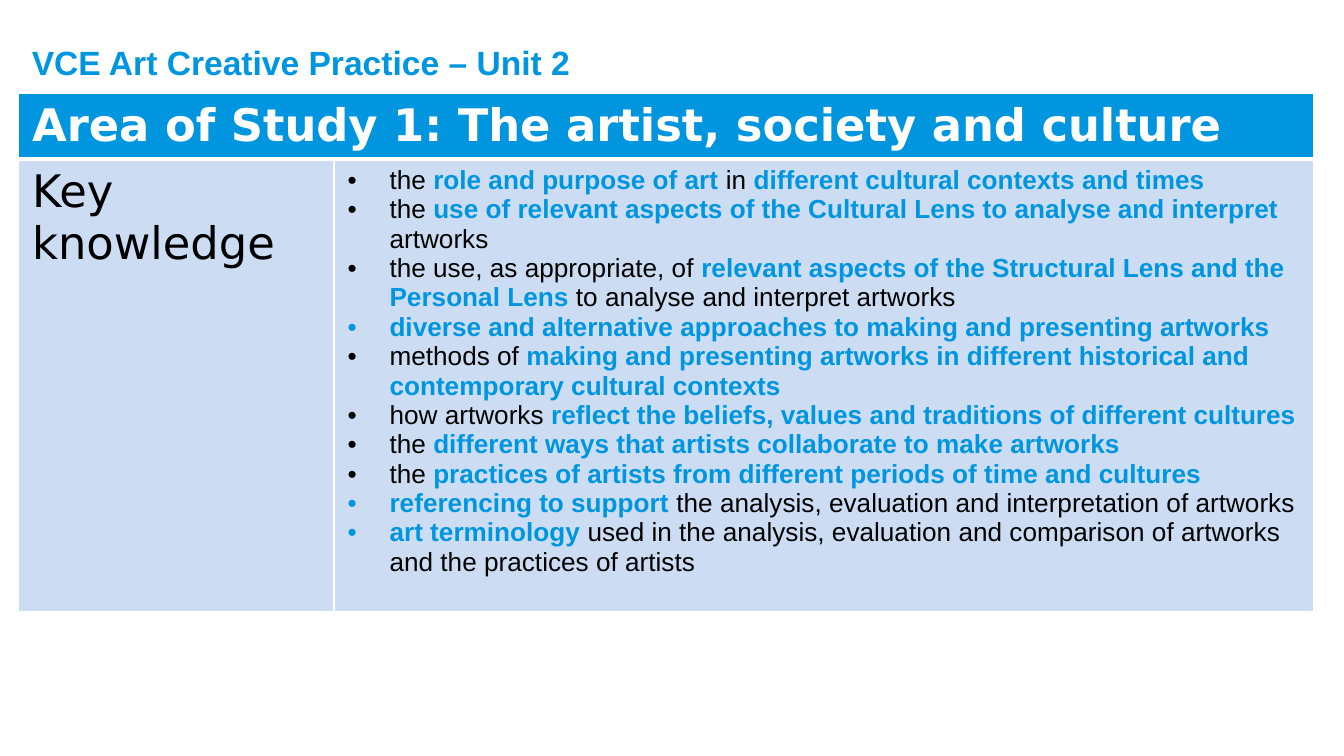
import pptx
import pptx.dml.color
import pptx.oxml
import pptx.oxml.ns
import pptx.util

Pt = pptx.util.Pt

BLUE, PALE, WHITE, BLACK = "0096DF", "CCDDF3", "FFFFFF", "000000"
HEADING = "VCE Art Creative Practice – Unit 2"
AREA = "Area of Study 1: The artist, society and culture"
# Asterisks enclose the highlighted phrases
KEY_KNOWLEDGE = [
    "the *role and purpose of art* in *different cultural contexts and times*",
    "the *use of relevant aspects of the Cultural Lens to analyse and interpret *artworks",
    "the use, as appropriate, of *relevant aspects of the Structural Lens and the "
    "Personal Lens *to analyse and interpret artworks",
    "*diverse and alternative approaches to making and presenting artworks*",
    "methods of *making and presenting artworks in different historical and "
    "contemporary cultural contexts*",
    "how artworks *reflect the beliefs, values and traditions of different cultures*",
    "the *different ways that artists collaborate to make artworks*",
    "the *practices of artists from different periods of time and cultures*",
    "*referencing to support *the analysis, evaluation and interpretation of artworks",
    "*art terminology *used in the analysis, evaluation and comparison of artworks "
    "and the practices of artists",
]


def color(value):
    return pptx.dml.color.RGBColor.from_string(value)


class SlideBuilder:
    body_font = "Arial"
    title_font = "DejaVu Sans"
    indent = 22.5

    def __init__(self, slide):
        self.slide = slide

    def add_run(self, paragraph, text, size, font, ink, bold=False):
        run = paragraph.add_run()
        run.text = text
        run.font.size = Pt(size)
        run.font.name = font
        run.font.bold = bold
        run.font.color.rgb = color(ink)

    def add_text(self, left, top, width, height, text):
        box = self.slide.shapes.add_textbox(Pt(left), Pt(top), Pt(width), Pt(height))
        box.text_frame.word_wrap = True
        self.add_run(box.text_frame.paragraphs[0], text, 18, self.body_font, BLUE, True)

    def add_table(self, left, top, widths, heights):
        frame = self.slide.shapes.add_table(
            len(heights), len(widths), Pt(left), Pt(top), Pt(sum(widths)), Pt(sum(heights)))
        table = frame.table
        for column, width in zip(table.columns, widths):
            column.width = Pt(width)
        for row, height in zip(table.rows, heights):
            row.height = Pt(height)
        return table

    def style_cell(self, cell, fill, top=1, bottom=1):
        properties = cell._tc.get_or_add_tcPr()
        for side, width in (("L", 1), ("R", 1), ("T", top), ("B", bottom)):
            properties.append(pptx.oxml.parse_xml(
                f'<a:ln{side} {pptx.oxml.ns.nsdecls("a")} w="{Pt(width)}"><a:solidFill>'
                f'<a:srgbClr val="{WHITE}"/></a:solidFill></a:ln{side}>'))
        cell.fill.solid()
        cell.fill.fore_color.rgb = color(fill)

    def add_bullets(self, cell, items):
        frame = cell.text_frame
        for index, item in enumerate(items):
            paragraph = frame.add_paragraph() if index else frame.paragraphs[0]
            properties = paragraph._p.get_or_add_pPr()
            properties.set("marL", str(Pt(self.indent)))
            properties.set("indent", str(-Pt(self.indent)))
            properties.append(pptx.oxml.parse_xml(
                f'<a:buFont {pptx.oxml.ns.nsdecls("a")} typeface="Arial"/>'))
            properties.append(pptx.oxml.parse_xml(
                f'<a:buChar {pptx.oxml.ns.nsdecls("a")} char="•"/>'))
            for part, text in enumerate(item.split("*")):
                if text:
                    strong = part % 2 == 1
                    self.add_run(paragraph, text, 14, self.body_font,
                                 BLUE if strong else BLACK, strong)


def main():
    presentation = pptx.Presentation()
    presentation.slide_width, presentation.slide_height = Pt(720), Pt(405)
    builder = SlideBuilder(presentation.slides.add_slide(presentation.slide_layouts[6]))

    # Study table
    table = builder.add_table(10, 50, [169, 525], [35, 242.5])
    for column in range(2):
        builder.style_cell(table.cell(0, column), BLUE, bottom=3)
        builder.style_cell(table.cell(1, column), PALE, top=3)
    table.cell(0, 0).merge(table.cell(0, 1))
    for row, text, ink in ((0, AREA, WHITE), (1, "Key knowledge", BLACK)):
        paragraph = table.cell(row, 0).text_frame.paragraphs[0]
        builder.add_run(paragraph, text, 24, builder.title_font, ink, row == 0)
    builder.add_bullets(table.cell(1, 1), KEY_KNOWLEDGE)

    # Heading
    builder.add_text(10, 19, 360, 29, HEADING)

    presentation.save("out.pptx")


if __name__ == "__main__":
    main()
